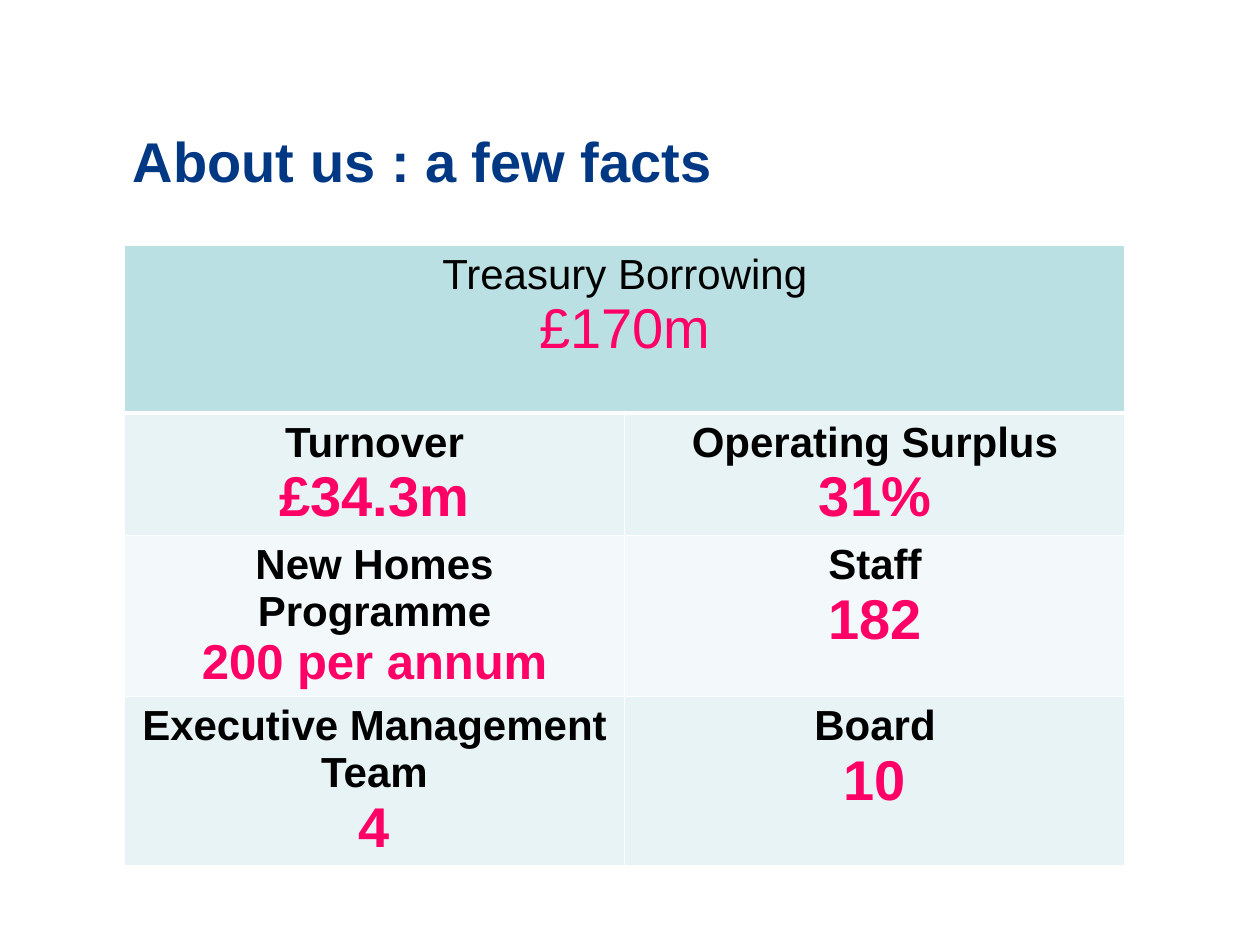
from lxml.etree import SubElement as Sub
from pptx import Presentation
from pptx.dml.color import RGBColor as RGB
from pptx.enum.text import MSO_ANCHOR as Anchor, PP_ALIGN as Align
from pptx.oxml.ns import qn
from pptx.util import Pt

NAVY, BLACK, PINK = RGB(0x00, 0x38, 0x83), RGB(0, 0, 0), RGB(0xFF, 0x00, 0x66)
WHITE, TEAL = RGB(0xFF, 0xFF, 0xFF), RGB(0xBB, 0xE0, 0xE3)
PALE, MIST = RGB(0xE7, 0xF3, 0xF4), RGB(0xF3, 0xF9, 0xFA)

# Row height, fill, and (label, value, value size) for each cell
ROWS = [
    (96, TEAL, [("Treasury Borrowing", "£170m", 32)]),
    (70, PALE, [("Turnover", "£34.3m", 32), ("Operating Surplus", "31%", 32)]),
    (92, MIST, [("New Homes Programme", "200 per annum", 28), ("Staff", "182", 32)]),
    (96, PALE, [("Executive Management Team", "4", 32), ("Board", "10", 32)]),
]


def style(font, size, color, bold):
    for key, val in dict(name="Arial", size=Pt(size), bold=bold).items():
        setattr(font, key, val)
    font.color.rgb = color


def put(shape, box):
    for key, val in zip(("left", "top", "width", "height"), box):
        setattr(shape, key, Pt(val))


def add_title(slide, box, text):
    title = slide.shapes.title
    put(title, box)
    frame = title.text_frame
    frame.text = text
    frame.margin_left = Pt(16)
    frame.vertical_anchor = Anchor.MIDDLE
    par = frame.paragraphs[0]
    par.alignment = Align.LEFT
    style(par.runs[0].font, 32, NAVY, True)


def add_edges(cell, base):
    """Draw white borders, with the given width in points at the bottom."""
    props = cell._tc.get_or_add_tcPr()
    for side, width in dict(L=1, R=1, T=1, B=base).items():
        line = Sub(props, qn(f"a:ln{side}"), w=str(Pt(width)))
        Sub(Sub(line, qn("a:solidFill")), qn("a:srgbClr"), val=str(WHITE))


def fill_cell(cell, fact, bold):
    label, value, size = fact
    frame = cell.text_frame
    frame.text = f"{label}\n{value}"
    for par, pts, color in zip(frame.paragraphs, (24, size), (BLACK, PINK)):
        par.alignment = Align.CENTER
        style(par.runs[0].font, pts, color, bold)


def add_facts(slide, box):
    table = slide.shapes.add_table(len(ROWS), 2, *map(Pt, box)).table
    table.cell(0, 0).merge(table.cell(0, 1))
    for row, (height, fill, facts) in enumerate(ROWS):
        table.rows[row].height = Pt(height)
        for cell in table.rows[row].cells:
            add_edges(cell, 1 if row else 3)
            cell.fill.solid()
            cell.fill.fore_color.rgb = fill
        for col, fact in enumerate(facts):
            fill_cell(table.cell(row, col), fact, row > 0)


def main():
    deck = Presentation()
    deck.slide_width, deck.slide_height = Pt(720), Pt(540)
    slide = deck.slides.add_slide(deck.slide_layouts[5])
    add_title(slide, (60, 37.5, 612, 108), "About us : a few facts")
    add_facts(slide, (71, 140, 572, sum(row[0] for row in ROWS)))
    deck.save("out.pptx")


if __name__ == "__main__":
    main()
